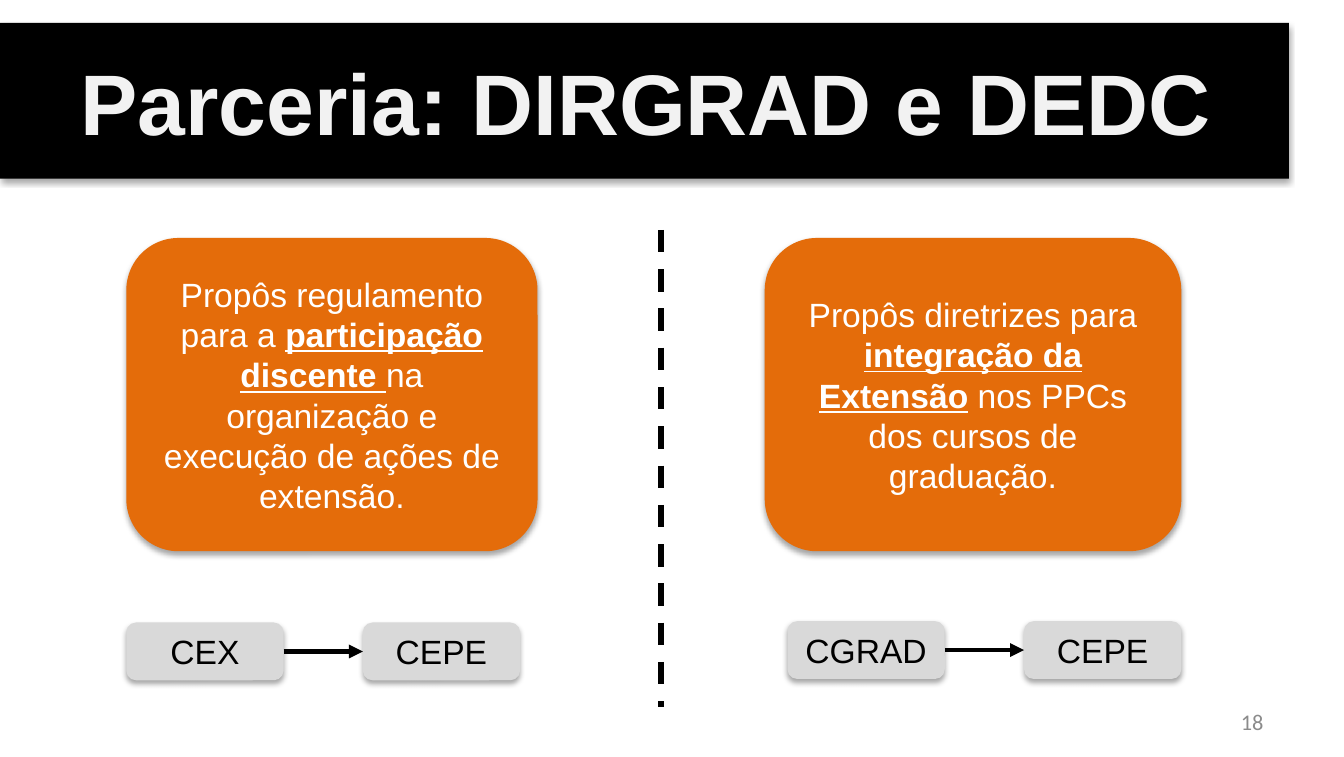
from dataclasses import dataclass

from lxml.etree import SubElement
from pptx import Presentation
from pptx.dml.color import RGBColor
from pptx.enum.dml import MSO_LINE
from pptx.enum.shapes import MSO_CONNECTOR, MSO_SHAPE
from pptx.enum.text import MSO_ANCHOR, PP_ALIGN
from pptx.oxml.ns import qn
from pptx.util import Inches, Pt

BLACK = RGBColor(0x00, 0x00, 0x00)
WHITE = RGBColor(0xFF, 0xFF, 0xFF)
OFF_WHITE = RGBColor(0xF2, 0xF2, 0xF2)
ORANGE = RGBColor(0xE4, 0x6C, 0x0A)
LIGHT_GRAY = RGBColor(0xD9, 0xD9, 0xD9)
NUMBER_GRAY = RGBColor(0x8B, 0x8B, 0x8B)

TITLE_FORMAT = {"name": "Arial", "size": Pt(46), "bold": True}
BODY_FORMAT = {"name": "Arial", "size": Pt(18)}
EMPHASIS_FORMAT = BODY_FORMAT | {"bold": True, "underline": True}
NUMBER_FORMAT = {"name": "Calibri", "size": Pt(12)}

CARD_TOP, CARD_HEIGHT = 1.77, 2.33
STEP_WIDTH, STEP_HEIGHT, STEP_PITCH = 1.17, 0.43, 1.76


@dataclass
class Span:
    text: str
    format: dict


@dataclass
class Partner:
    card_left: float
    card_width: float
    proposal: list[Span]
    steps_left: float
    steps_top: float
    steps: list[str]


PARTNERS = [
    Partner(0.94, 3.06, [
        Span("Propôs regulamento para a ", BODY_FORMAT),
        Span("participação discente ", EMPHASIS_FORMAT),
        Span("na organização e execução de ações de extensão.", BODY_FORMAT),
    ], 0.94, 4.63, ["CEX", "CEPE"]),
    Partner(5.69, 3.1, [
        Span("Propôs diretrizes para ", BODY_FORMAT),
        Span("integração da Extensão", EMPHASIS_FORMAT),
        Span(" nos PPCs dos cursos de graduação.", BODY_FORMAT),
    ], 5.86, 4.62, ["CGRAD", "CEPE"]),
]


def write_text(shape, spans: list[Span], color: RGBColor, align: PP_ALIGN):
    frame = shape.text_frame
    frame.word_wrap = True
    frame.vertical_anchor = MSO_ANCHOR.MIDDLE
    para = frame.paragraphs[0]
    para.alignment = align
    for span in spans:
        run = para.add_run()
        run.text = span.text
        run.font.color.rgb = color
        for name, value in span.format.items():
            setattr(run.font, name, value)
    return para


def add_shadow(shape) -> None:
    shape.shadow.inherit = False
    effects = shape._element.spPr.find(qn("a:effectLst"))
    shadow = SubElement(effects, qn("a:outerShdw"), blurRad=str(Pt(3.1)),
                        dist=str(Pt(1.8)), dir="5400000", rotWithShape="0")
    color = SubElement(shadow, qn("a:srgbClr"), val=str(BLACK))
    SubElement(color, qn("a:alpha"), val="35000")


def add_box(page, kind: MSO_SHAPE, left: float, top: float, width: float,
            height: float, fill: RGBColor):
    box = page.shapes.add_shape(kind, Inches(left), Inches(top),
                                Inches(width), Inches(height))
    box.fill.solid()
    box.fill.fore_color.rgb = fill
    box.line.fill.background()
    add_shadow(box)
    return box


def add_line(page, start: tuple[float, float], end: tuple[float, float],
             weight: float):
    line = page.shapes.add_connector(
        MSO_CONNECTOR.STRAIGHT, *map(Inches, start), *map(Inches, end))
    line.line.color.rgb = BLACK
    line.line.width = Pt(weight)
    SubElement(line._element.spPr, qn("a:effectLst"))
    return line


def add_steps(page, partner: Partner) -> None:
    boxes = []
    for index, label in enumerate(partner.steps):
        box = add_box(page, MSO_SHAPE.ROUNDED_RECTANGLE,
                      partner.steps_left + index * STEP_PITCH,
                      partner.steps_top, STEP_WIDTH, STEP_HEIGHT, LIGHT_GRAY)
        write_text(box, [Span(label, BODY_FORMAT)], BLACK, PP_ALIGN.CENTER)
        boxes.append(box)
    middle = partner.steps_top + STEP_HEIGHT / 2
    for index, (source, target) in enumerate(zip(boxes, boxes[1:])):
        left = partner.steps_left + index * STEP_PITCH
        arrow = add_line(page, (left + STEP_WIDTH, middle),
                         (left + STEP_PITCH, middle), 2.5)
        arrow.begin_connect(source, 3)
        arrow.end_connect(target, 1)
        SubElement(arrow.line._get_or_add_ln(), qn("a:tailEnd"), type="triangle")


def main() -> None:
    deck = Presentation()
    deck.slide_width, deck.slide_height = Inches(10), Inches(5.63)
    page = deck.slides.add_slide(deck.slide_layouts[6])

    # Title band
    band = add_box(page, MSO_SHAPE.RECTANGLE, 0, 0.17, 9.59, 1.16, BLACK)
    title = write_text(band, [Span("Parceria: DIRGRAD e DEDC", TITLE_FORMAT)],
                       OFF_WHITE, PP_ALIGN.LEFT)
    title._p.get_or_add_pPr().set("marL", str(Inches(0.5)))

    # Slide number
    number = page.shapes.add_textbox(Inches(7.17), Inches(5.22),
                                     Inches(2.33), Inches(0.3))
    write_text(number, [Span("18", NUMBER_FORMAT)], NUMBER_GRAY, PP_ALIGN.RIGHT)

    # Divider between the partners
    divider = add_line(page, (4.92, 1.71), (4.92, 5.26), 3)
    divider.line.dash_style = MSO_LINE.DASH

    # Proposal card and approval steps of each partner
    for partner in PARTNERS:
        card = add_box(page, MSO_SHAPE.ROUNDED_RECTANGLE, partner.card_left,
                       CARD_TOP, partner.card_width, CARD_HEIGHT, ORANGE)
        write_text(card, partner.proposal, WHITE, PP_ALIGN.CENTER)
        add_steps(page, partner)

    deck.save("out.pptx")


if __name__ == "__main__":
    main()
